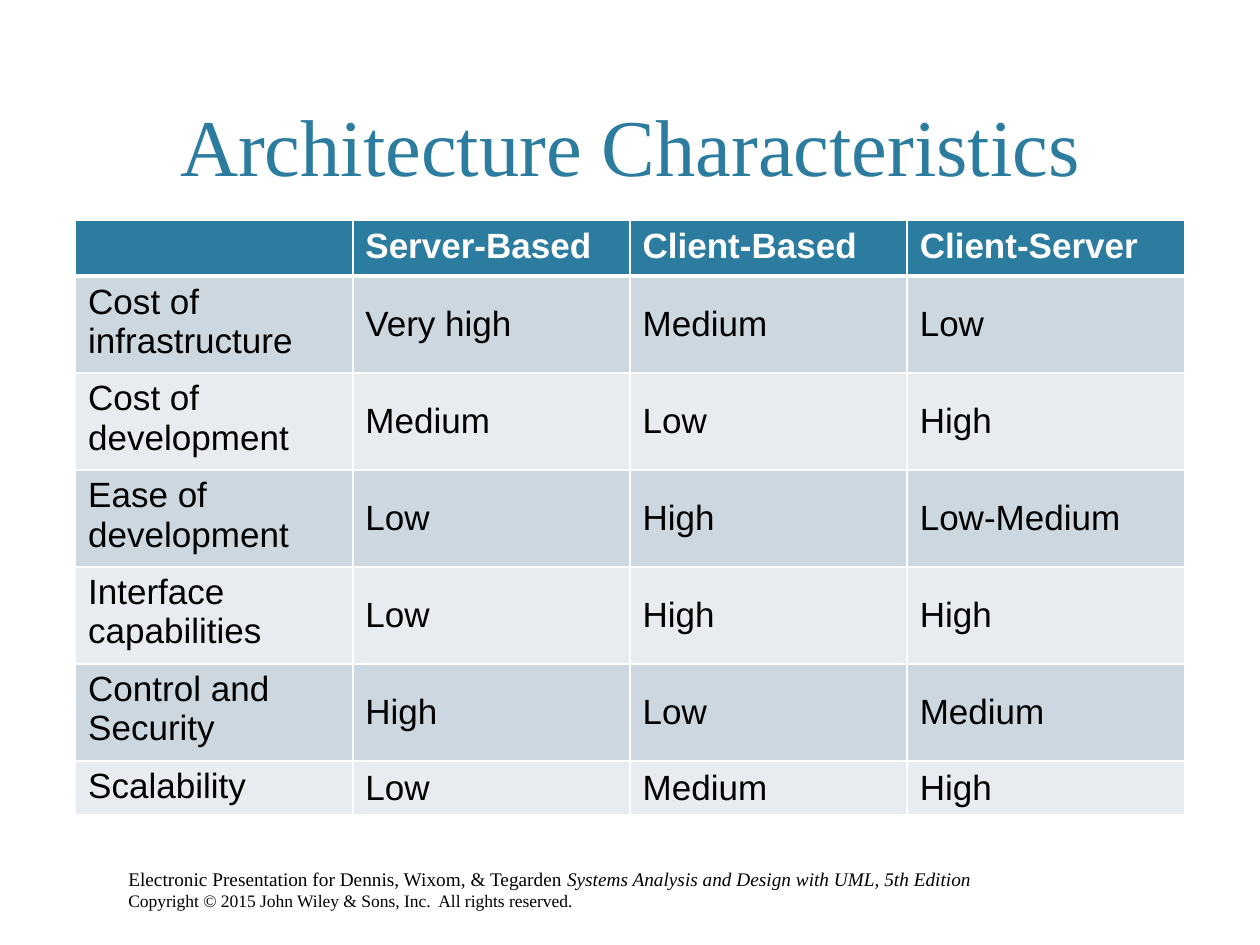
from pptx import Presentation
from pptx.dml.color import RGBColor
from pptx.enum.text import MSO_ANCHOR, PP_ALIGN
from pptx.oxml import parse_xml
from pptx.oxml.ns import nsdecls
from pptx.util import Inches, Pt

TEAL = RGBColor(0x2C, 0x7C, 0x9F)
BAND_DARK = RGBColor(0xCD, 0xD7, 0xDF)
BAND_LIGHT = RGBColor(0xE8, 0xEC, 0xF0)
WHITE = RGBColor(0xFF, 0xFF, 0xFF)
BLACK = RGBColor(0, 0, 0)
SERIF, SANS = "Times New Roman", "Arial"


def add_run(p, text, size, font, color, bold=False, italic=False):
    r = p.add_run()
    r.text = text
    r.font.size = Pt(size)
    r.font.name = font
    r.font.color.rgb = color
    r.font.bold = bold
    r.font.italic = italic


def set_borders(cell, bottom):
    tcPr = cell._tc.get_or_add_tcPr()
    for side, width in (("L", 1), ("R", 1), ("T", 1), ("B", bottom)):
        tcPr.append(parse_xml(
            f'<a:ln{side} {nsdecls("a")} w="{Pt(width)}"><a:solidFill>'
            f'<a:srgbClr val="{WHITE}"/></a:solidFill></a:ln{side}>'))


prs = Presentation()
prs.slide_width, prs.slide_height = Inches(10), Inches(7.5)
s = prs.slides.add_slide(prs.slide_layouts[5])

# Title
title = s.shapes.title
title.left, title.top = Inches(0.6), Inches(0.12)
title.width, title.height = Inches(8.8), Inches(1.46)
tf = title.text_frame
tf.vertical_anchor = MSO_ANCHOR.BOTTOM
p = tf.paragraphs[0]
p.alignment = PP_ALIGN.CENTER
add_run(p, "Architecture Characteristics", 46, SERIF, TEAL)

# Comparison table
rows = [
    ("", "Server-Based", "Client-Based", "Client-Server"),
    ("Cost of infrastructure", "Very high", "Medium", "Low"),
    ("Cost of development", "Medium", "Low", "High"),
    ("Ease of development", "Low", "High", "Low-Medium"),
    ("Interface capabilities", "Low", "High", "High"),
    ("Control and Security", "High", "Low", "Medium"),
    ("Scalability", "Low", "Medium", "High"),
]
table = s.shapes.add_table(len(rows), 4, Inches(0.6), Inches(1.75),
                           Inches(8.8), Inches(4.7)).table
for i, row in enumerate(rows):
    header = i == 0
    table.rows[i].height = Inches(0.43 if i in (0, len(rows) - 1) else 0.77)
    for j, text in enumerate(row):
        cell = table.cell(i, j)
        set_borders(cell, 3 if header or i == 0 else 1)
        cell.fill.solid()
        cell.fill.fore_color.rgb = (
            TEAL if header else BAND_DARK if i % 2 else BAND_LIGHT)
        if not header and j > 0:
            cell.vertical_anchor = MSO_ANCHOR.MIDDLE
        p = cell.text_frame.paragraphs[0]
        p.font.size = Pt(20)
        if text:
            add_run(p, text, 20, SANS, WHITE if header else BLACK, bold=header)

# Footer
footer = s.shapes.add_textbox(Inches(0.92), Inches(6.83), Inches(7.06), Inches(0.45))
tf = footer.text_frame
tf.word_wrap = False
p = tf.paragraphs[0]
add_run(p, "Electronic Presentation for Dennis, Wixom, & Tegarden ", 11, SERIF, BLACK)
add_run(p, "Systems Analysis and Design with UML, 5th Edition", 11, SERIF, BLACK,
        italic=True)
p = tf.add_paragraph()
add_run(p, "Copyright © 2015 John Wiley & Sons, Inc.  All rights reserved.", 10,
        SERIF, BLACK)

prs.save("out.pptx")
